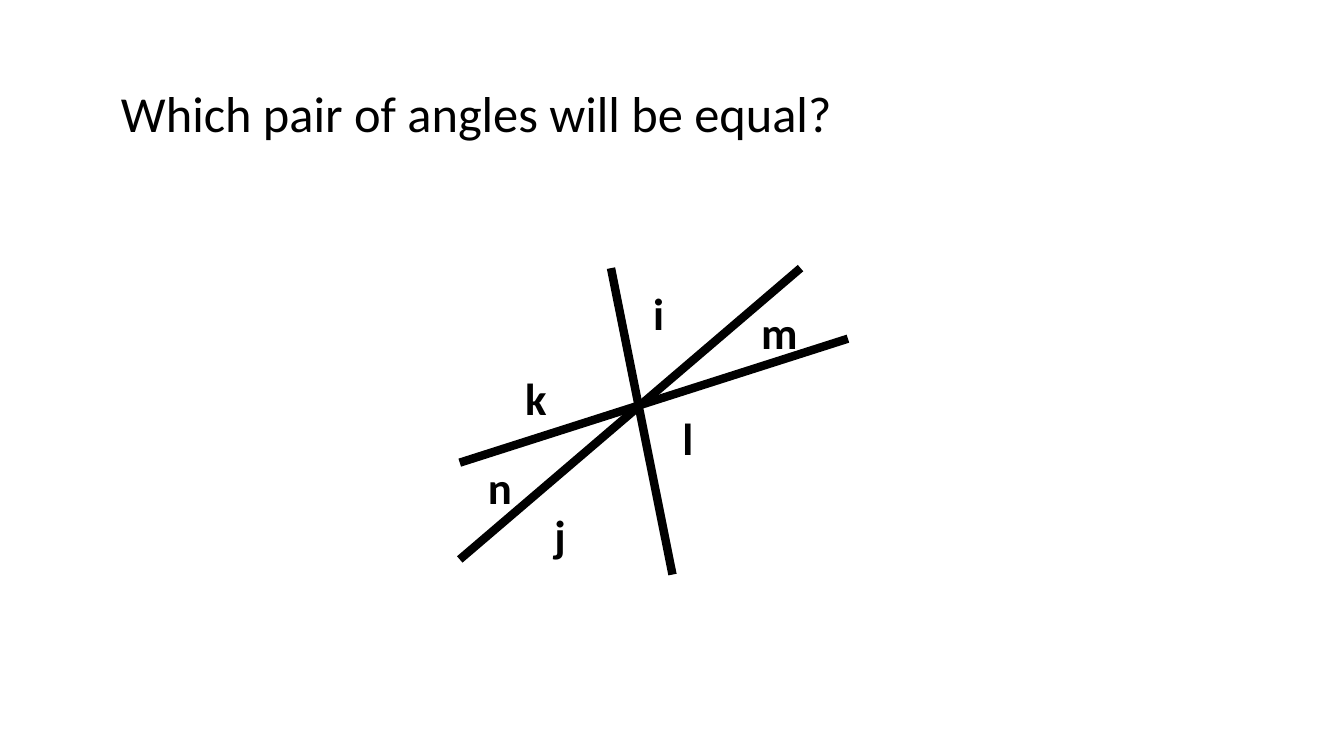
from typing import NamedTuple

from lxml.etree import SubElement
from pptx import Presentation
from pptx.dml.color import RGBColor
from pptx.enum.shapes import MSO_CONNECTOR
from pptx.enum.text import MSO_ANCHOR, MSO_AUTO_SIZE, PP_ALIGN
from pptx.oxml.ns import qn
from pptx.shapes.autoshape import Shape
from pptx.slide import Slide
from pptx.util import Inches, Pt

BLACK = "000000"
FONT = "Calibri"
LABEL_WIDTH, LABEL_HEIGHT = 0.57, 0.64


class Line(NamedTuple):
    start_x: float
    start_y: float
    end_x: float
    end_y: float


class AngleLabel(NamedTuple):
    text: str
    left: float
    top: float


LINES = [
    Line(7.94, 2.66, 4.56, 5.55),
    Line(6.06, 2.66, 6.67, 5.7),
    Line(8.41, 3.36, 4.56, 4.59),
]
ANGLE_LABELS = [
    AngleLabel("i", 6.38, 2.79),
    AngleLabel("l", 6.67, 4.03),
    AngleLabel("j", 5.4, 4.99),
    AngleLabel("k", 5.11, 3.63),
    AngleLabel("m", 7.45, 2.97),
    AngleLabel("n", 4.74, 4.51),
]


def color(hex_code: str) -> RGBColor:
    return RGBColor.from_string(hex_code)


def write_text(shape: Shape, text: str, size: float, bold: bool) -> None:
    """Fill a shape with one left-aligned line of text, set from the top."""
    frame = shape.text_frame
    frame.text = text
    frame.word_wrap = True
    frame.auto_size = MSO_AUTO_SIZE.SHAPE_TO_FIT_TEXT
    frame.vertical_anchor = MSO_ANCHOR.TOP
    paragraph = frame.paragraphs[0]
    paragraph.alignment = PP_ALIGN.LEFT
    paragraph.font.name = FONT
    paragraph.font.size = Pt(size)
    paragraph.font.bold = bold
    paragraph.font.color.rgb = color(BLACK)


def add_title(slide: Slide, text: str) -> None:
    title = slide.shapes.title
    title.left, title.top = Inches(1.1), Inches(0.76)
    title.width, title.height = Inches(9.54), Inches(0.71)
    write_text(title, text, 36, False)


def add_line(slide: Slide, line: Line) -> None:
    connector = slide.shapes.add_connector(
        MSO_CONNECTOR.STRAIGHT, *(Inches(value) for value in line)
    )
    connector.line.color.rgb = color(BLACK)
    connector.line.width = Pt(6)
    SubElement(connector._element.spPr, qn("a:effectLst"))


def add_angle_label(slide: Slide, label: AngleLabel) -> None:
    box = slide.shapes.add_textbox(
        Inches(label.left), Inches(label.top), Inches(LABEL_WIDTH), Inches(LABEL_HEIGHT)
    )
    write_text(box, label.text, 32, True)


def main() -> None:
    presentation = Presentation()
    presentation.slide_width = Inches(13.33)
    presentation.slide_height = Inches(7.5)
    slide = presentation.slides.add_slide(presentation.slide_layouts.get_by_name("Title Only"))
    add_title(slide, "Which pair of angles will be equal?")
    for line in LINES:
        add_line(slide, line)
    for label in ANGLE_LABELS:
        add_angle_label(slide, label)
    presentation.save("out.pptx")


if __name__ == "__main__":
    main()
